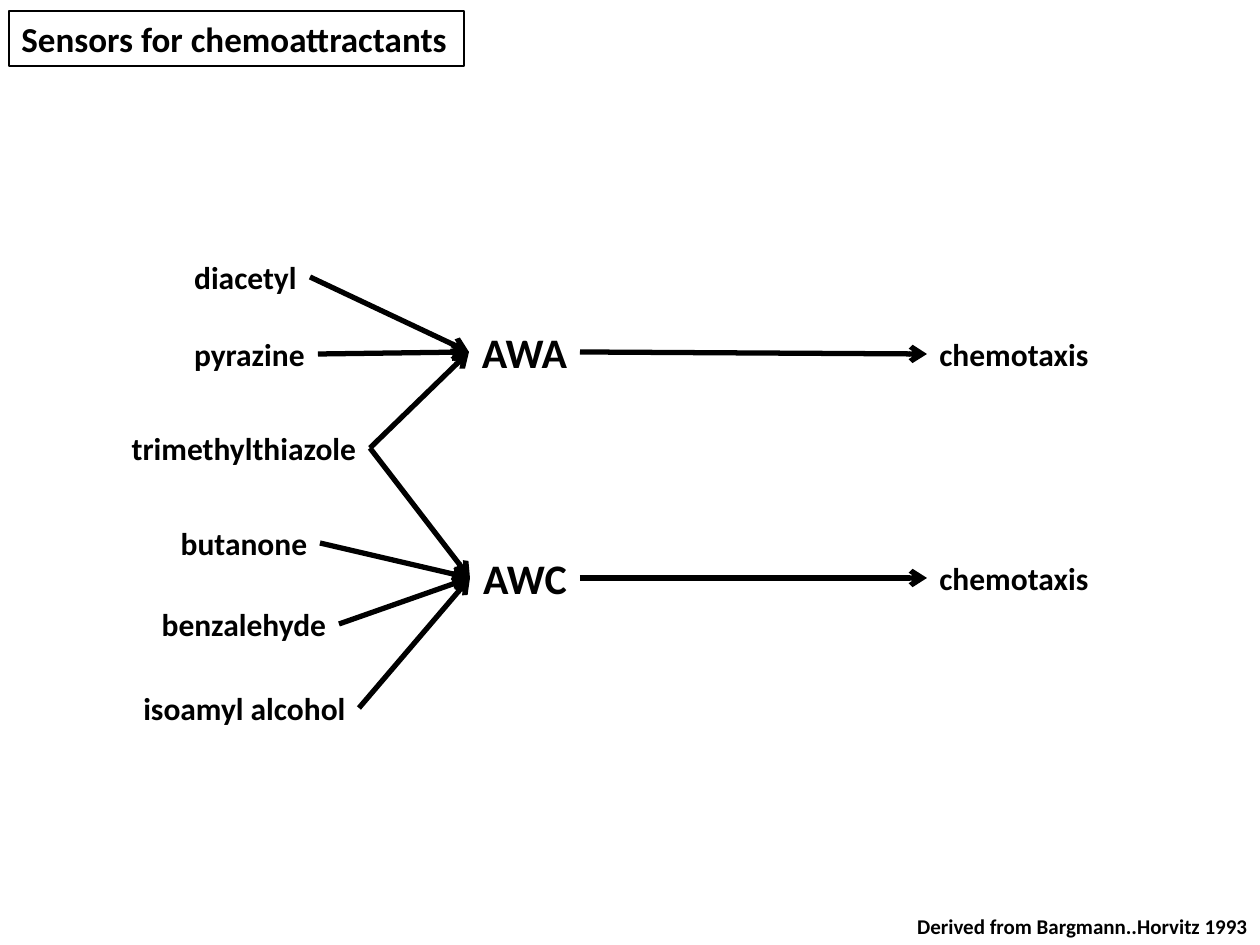
"""Build a slide mapping chemoattractants to their sensory neurons and to chemotaxis."""
import lxml.etree
import pptx
import pptx.dml.color
import pptx.enum.shapes
import pptx.enum.text
import pptx.oxml.ns
import pptx.util

THEME = {
    "font": "Calibri",
    "ink": pptx.dml.color.RGBColor.from_string("000000"),
    "paper": pptx.dml.color.RGBColor.from_string("FFFFFF"),
    "title": 20,
    "neuron": 24,
    "label": 18,
    "credit": 12,
}
ALIGN = pptx.enum.text.PP_ALIGN
SCALE = 914400 / 126
LABEL_HEIGHT = 50
NEURON_HEIGHT = 63

deck = pptx.Presentation()
deck.slide_width = pptx.util.Inches(10)
deck.slide_height = pptx.util.Inches(7.5)
page = deck.slides.add_slide(deck.slide_layouts[6])


def add_text(text, place, size, align=ALIGN.CENTER, wrap=False, framed=False, fill=None):
    area = [round(length * SCALE) for length in place]
    if framed or fill is not None:
        box = page.shapes.add_shape(pptx.enum.shapes.MSO_SHAPE.RECTANGLE, *area)
        box.shadow.inherit = False
        if fill is None:
            box.fill.background()
        else:
            box.fill.solid()
            box.fill.fore_color.rgb = fill
        if framed:
            box.line.color.rgb = THEME["ink"]
            box.line.width = pptx.util.Pt(0.75)
        else:
            box.line.fill.background()
    else:
        box = page.shapes.add_textbox(*area)
    frame = box.text_frame
    frame.word_wrap = wrap
    frame.auto_size = pptx.enum.text.MSO_AUTO_SIZE.SHAPE_TO_FIT_TEXT
    frame.vertical_anchor = pptx.enum.text.MSO_ANCHOR.TOP
    para = frame.paragraphs[0]
    para.alignment = align
    span = para.add_run()
    span.text = text
    span.font.name = THEME["font"]
    span.font.size = pptx.util.Pt(size)
    span.font.bold = True
    span.font.color.rgb = THEME["ink"]


def add_arrow(start, end):
    ends = [round(length * SCALE) for length in (*start, *end)]
    arrow = page.shapes.add_connector(pptx.enum.shapes.MSO_CONNECTOR.STRAIGHT, *ends)
    arrow.line.color.rgb = THEME["ink"]
    arrow.line.width = pptx.util.Pt(3)
    qualify = pptx.oxml.ns.qn
    outline = arrow.line._get_or_add_ln()
    lxml.etree.SubElement(outline, qualify("a:tailEnd"), type="arrow")
    lxml.etree.SubElement(arrow._element.spPr, qualify("a:effectLst"))


add_text("Sensors for chemoattractants", (9, 11, 455, 55), THEME["title"],
         align=ALIGN.LEFT, framed=True)

neurons = {"AWA": (469, 320, 111, 329), "AWC": (470, 546, 110, 553)}
response_left = 927
for neuron, (left, top, width, response_top) in neurons.items():
    add_text(neuron, (left, top, width, NEURON_HEIGHT), THEME["neuron"], fill=THEME["paper"])
    add_text("chemotaxis", (response_left, response_top, 175, LABEL_HEIGHT),
             THEME["label"], align=ALIGN.LEFT)
    add_arrow((left + width, top + NEURON_HEIGHT // 2 + 1),
              (response_left, response_top + LABEL_HEIGHT // 2))

attractants = [
    ("diacetyl", 181, 252, 129, ["AWA"]),
    ("pyrazine", 181, 329, 137, ["AWA"]),
    ("trimethylthiazole", 118, 423, 252, ["AWA", "AWC"]),
    ("butanone", 168, 518, 152, ["AWC"]),
    ("benzalehyde", 149, 599, 190, ["AWC"]),
    ("isoamyl alcohol", 130, 683, 229, ["AWC"]),
]
for name, left, top, width, targets in attractants:
    add_text(name, (left, top, width, LABEL_HEIGHT), THEME["label"])
    for target in targets:
        target_left, target_top = neurons[target][:2]
        add_arrow((left + width, top + LABEL_HEIGHT // 2),
                  (target_left, target_top + NEURON_HEIGHT // 2 + 1))

add_text("Derived from Bargmann..Horvitz 1993", (483, 907, 777, 38), THEME["credit"],
         align=ALIGN.RIGHT, wrap=True)

deck.save("out.pptx")
